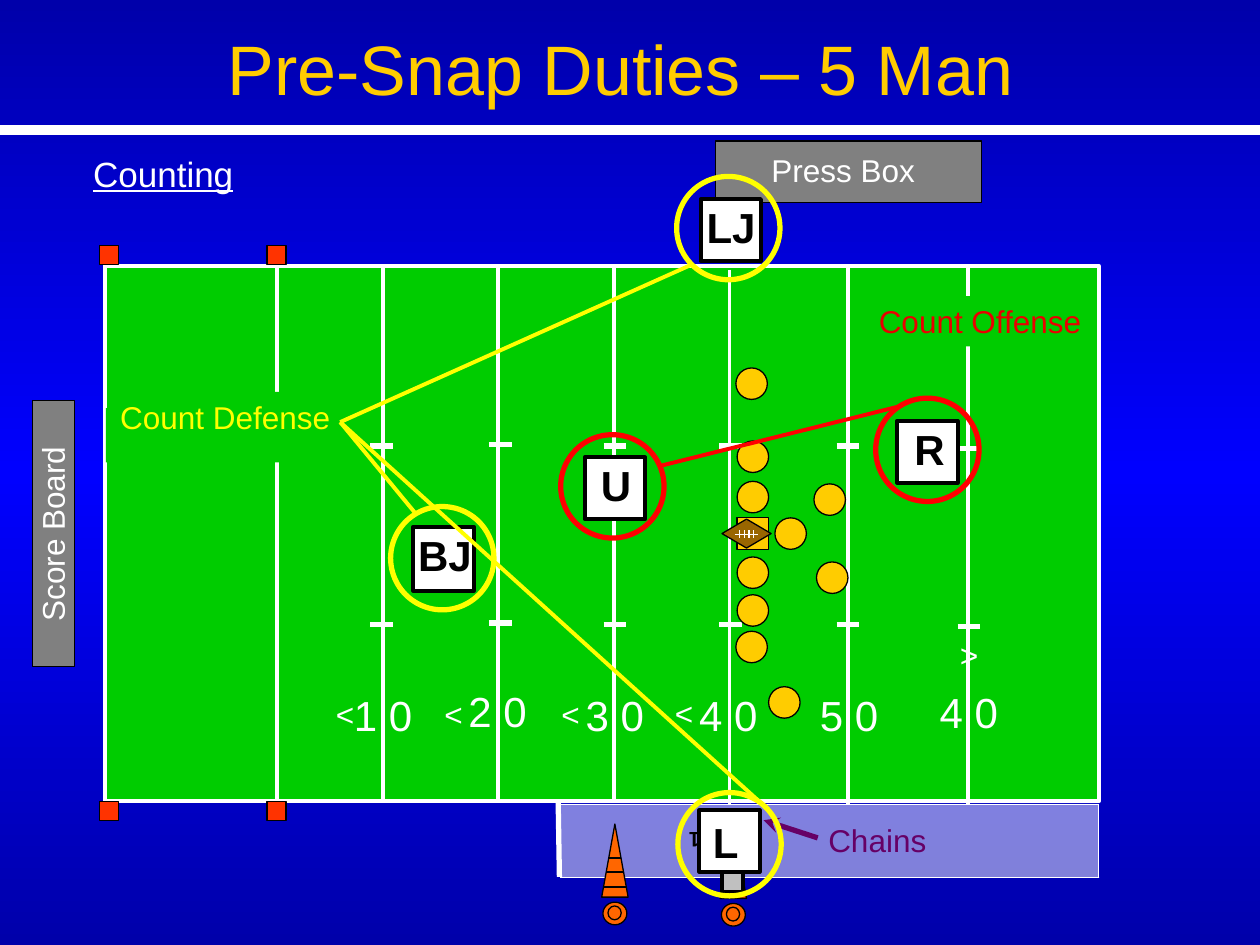
from pptx import Presentation
from pptx.dml.color import RGBColor
from pptx.enum.dml import MSO_LINE_DASH_STYLE as Dash
from pptx.enum.shapes import MSO_CONNECTOR as Connector, MSO_SHAPE as Shape
from pptx.enum.text import PP_ALIGN as Align
from pptx.oxml import parse_xml
from pptx.oxml.ns import nsdecls, qn
from pptx.util import Inches, Pt

COLORS = {
    "white": "FFFFFF", "black": "000000", "gray": "808080", "silver": "C0C0C0",
    "grass": "00CC00", "pylon": "FF3300", "cone": "FF6600", "gold": "FFCC00",
    "leather": "996600", "red": "FF0000", "crimson": "EA0000",
    "yellow": "FFFF00", "purple": "660066", "navy": "0000AA", "blue": "0000FF",
}
FORMATS = {
    "title": {"size": Pt(40)},
    "heading": {"size": Pt(20), "underline": True},
    "label": {"size": Pt(18)},
    "yard": {"size": Pt(24)},
    "official": {"size": Pt(24), "bold": True},
    "marker": {"size": Pt(12), "bold": True},
}


class FieldSlide:
    columns, rows, font_name = 100, 75, "Arial"

    def __init__(self, presentation):
        self.column = presentation.slide_width / self.columns
        self.row = presentation.slide_height / self.rows
        self.slide = presentation.slides.add_slide(presentation.slide_layouts[6])
        self.shapes = self.slide.shapes

    def x(self, columns):
        return round(columns * self.column)

    def y(self, rows):
        return round(rows * self.row)

    def frame(self, left, top, width, height):
        return self.x(left), self.y(top), self.x(width), self.y(height)

    def color(self, name):
        return RGBColor.from_string(COLORS[name])

    def background(self, *names):
        stops = "".join(
            f'<a:gs pos="{100000 * index // (len(names) - 1)}">'
            f'<a:srgbClr val="{COLORS[name]}"/></a:gs>'
            for index, name in enumerate(names))
        self.slide.element.cSld.insert(0, parse_xml(
            f'<p:bg {nsdecls("p", "a")}><p:bgPr><a:gradFill><a:gsLst>{stops}</a:gsLst>'
            '<a:lin ang="5400000" scaled="0"/></a:gradFill><a:effectLst/></p:bgPr></p:bg>'))

    def box(self, kind, frame, fill=None, line="black", weight=0.75):
        shape = self.shapes.add_shape(kind, *self.frame(*frame))
        shape.shadow.inherit = False
        if fill:
            shape.fill.solid()
            shape.fill.fore_color.rgb = self.color(fill)
        else:
            shape.fill.background()
        if line:
            shape.line.color.rgb = self.color(line)
            shape.line.width = Pt(weight)
        else:
            shape.line.fill.background()
        return shape

    def line(self, start, end, color="white", weight=2.25, arrow=None):
        connector = self.shapes.add_connector(
            Connector.STRAIGHT, self.x(start[0]), self.y(start[1]),
            self.x(end[0]), self.y(end[1]))
        connector.line.color.rgb = self.color(color)
        connector.line.width = Pt(weight)
        if arrow:
            connector.line._get_or_add_ln().append(
                parse_xml(f'<a:tailEnd {nsdecls("a")} type="{arrow}"/>'))
        connector._element.spPr.append(parse_xml(f'<a:effectLst {nsdecls("a")}/>'))

    def text(self, words, frame, style="label", color="white", right=False, rotation=0):
        shape = self.shapes.add_textbox(*self.frame(*frame))
        shape.rotation = rotation
        text_frame = shape.text_frame
        text_frame.word_wrap = True
        if right:
            text_frame.margin_left = 0
        else:
            text_frame.margin_right = 0
        paragraph = text_frame.paragraphs[0]
        paragraph.alignment = Align.RIGHT if right else Align.LEFT
        run = paragraph.add_run()
        run.text = words
        for name, value in {"name": self.font_name, **FORMATS[style]}.items():
            setattr(run.font, name, value)
        run.font.color.rgb = self.color(color)

    def cone(self, left, top, bands):
        self.box(Shape.ISOSCELES_TRIANGLE, (left, top, 2.1, 5.8), "cone")
        self.box(Shape.OVAL, (left + 0.1, top + 6.2, 1.9, 1.8), "cone")
        for drop in bands:
            half = 1.05 * drop / 5.8
            self.line((left + 1.05 - half, top + drop),
                      (left + 1.05 + half, top + drop), "black", 0.75)
        self.box(Shape.OVAL, (left + 0.5, top + 6.5, 1.05, 1.1))

    def official(self, letters, left, top, text_left, text_top, height=4.9):
        self.box(Shape.RECTANGLE, (left, top, 4.8, height), "white", weight=2.25)
        self.text(letters, (text_left, text_top, 7, 5), "official", "black")

    def ring(self, left, top, color):
        self.box(Shape.OVAL, (left, top, 8.2, 8.2), line=color, weight=3)


def draw_field(board):
    board.box(Shape.RECTANGLE, (56.8, 11.2, 21.1, 4.9), "gray")
    board.line((0, 10.3), (100, 10.3), weight=6)
    board.text("Counting", (6.4, 11.6, 13.1, 12.7), "heading")
    board.box(Shape.RECTANGLE, (8.3, 21.1, 78.9, 42.5), "grass", "white", 2.25)
    for column, top in ((22, 21.1), (30.4, 21.1), (39.5, 21.1), (48.7, 21.1),
                        (57.9, 21.4), (67.3, 21.3), (76.8, 21.3)):
        board.line((column, top), (column, top + 42.5))
    for left in (21.2, 7.9):
        for top in (19.5, 63.6):
            board.box(Shape.RECTANGLE, (left, top, 1.5, 1.5), "pylon")
    board.text("Press Box", (60.2, 11.5, 13.4, 4), right=True)
    for yard, left, top in (("1 0", 26.1, 54.2), ("2 0", 35.2, 53.9),
                            ("3 0", 44.5, 54.2), ("4 0", 53.5, 54.2),
                            ("5 0", 63.1, 54.2), ("4 0", 72.6, 54)):
        board.text(yard, (left, top, 7.6, 5), "yard", right=True)

    board.line((44.3, 63.6), (44.4, 69.6), weight=3)
    team_area = board.box(Shape.RECTANGLE, (44.4, 63.8, 42.8, 5.8), "white", "white", 0.25)
    team_area.line.dash_style = Dash.ROUND_DOT
    team_area._element.spPr.find(qn("a:solidFill"))[0].append(
        parse_xml(f'<a:alpha {nsdecls("a")} val="50000"/>'))
    for left, top in ((29.4, 35.4), (38.8, 35.3), (47.9, 35.4),
                      (57.1, 35.4), (66.4, 35.4), (76, 35.6)):
        for row in (top, top + 14.15):
            board.line((left, row), (left + 1.8, row), weight=3)
    for left, top, rotation in ((25.6, 54.7, 0), (34.2, 54.7, 0), (43.5, 54.7, 0),
                                (52.5, 54.6, 0), (75.2, 50.3, 180)):
        board.text("<", (left, top, 3.5, 4), right=True, rotation=rotation)

    board.cone(57.15, 65.5, (3.8, 5))
    board.box(Shape.RECTANGLE, (57.3, 68.7, 1.7, 2.1), "silver", weight=2.25)
    board.text("1", (53.7, 65.2, 2.9, 3), "marker", "black", rotation=180)
    board.cone(47.75, 65.4, (2.7, 3.8, 5))
    board.box(Shape.RECTANGLE, (2.6, 31.8, 3.3, 21.1), "gray")
    board.text("Score Board", (-3.8, 40.4, 15.9, 4), right=True, rotation=270)
    board.text("Pre-Snap Duties – 5 Man", (17.1, 1.5, 66, 7.7), "title", "gold")


def draw_players(board):
    board.official("U", 46.4, 36.3, 46.7, 36)
    board.official("R", 71.2, 33.4, 71.6, 33.1)
    board.official("L", 55.5, 64.3, 55.6, 64.3)
    board.official("LJ", 55.6, 15.8, 55.1, 15.5)
    board.official("BJ", 32.8, 41.8, 32.2, 41.5, 5.1)

    board.box(Shape.RECTANGLE, (58.5, 41.1, 2.5, 2.5), "gold")
    for left, top in ((58.5, 38.2), (58.5, 35), (58.5, 44.2), (58.5, 47.2),
                      (61.5, 41.1), (61, 54.5), (58.4, 50.1), (58.4, 29.2),
                      (64.6, 38.4), (64.8, 44.6)):
        board.box(Shape.OVAL, (left, top, 2.5, 2.5), "gold")
    board.box(Shape.FLOWCHART_DECISION, (57.3, 41.2, 3.9, 2.3), "leather")
    board.line((58.3, 42.4), (60.2, 42.4), weight=0.75)
    for lace in range(4):
        column = 58.7 + 0.37 * lace
        board.line((column, 42.1), (column, 42.7), weight=0.75)


def draw_duties(board):
    board.ring(69.5, 31.6, "red")
    board.ring(44.5, 34.5, "red")
    board.box(Shape.RECTANGLE, (68.7, 23.5, 18.1, 4), "grass", None)
    board.text("Count Offense", (68.7, 23.5, 18.1, 4), color="crimson", right=True)
    board.ring(31, 40.2, "yellow")
    board.box(Shape.RECTANGLE, (20.7, 31.2, 2.5, 4.3), "grass", "grass")
    board.line((64.9, 66.5), (60.6, 65.1), "purple", 3, "stealth")
    board.text("Chains", (64.7, 64.7, 9.8, 4), color="purple", right=True)
    board.box(Shape.RECTANGLE, (8.4, 32.4, 17.8, 4.3), "grass", None)
    board.box(Shape.RECTANGLE, (8.5, 31.1, 18.7, 4), "grass", None)
    board.text("Count Defense", (8.5, 31.1, 18.7, 4), color="yellow", right=True)
    board.line((33.1, 40.9), (27, 33.5), "yellow")
    board.line((52.3, 37), (71.6, 32.2), "red")
    board.ring(53.7, 14, "yellow")
    board.ring(53.8, 62.9, "yellow")
    for end in ((54.9, 21), (60.8, 64.1)):
        board.line((27, 33.5), end, "yellow")


def main():
    presentation = Presentation()
    presentation.slide_width, presentation.slide_height = Inches(10), Inches(7.5)
    board = FieldSlide(presentation)
    board.background("navy", "blue", "navy")
    draw_field(board)
    draw_players(board)
    draw_duties(board)
    presentation.save("out.pptx")


if __name__ == "__main__":
    main()
